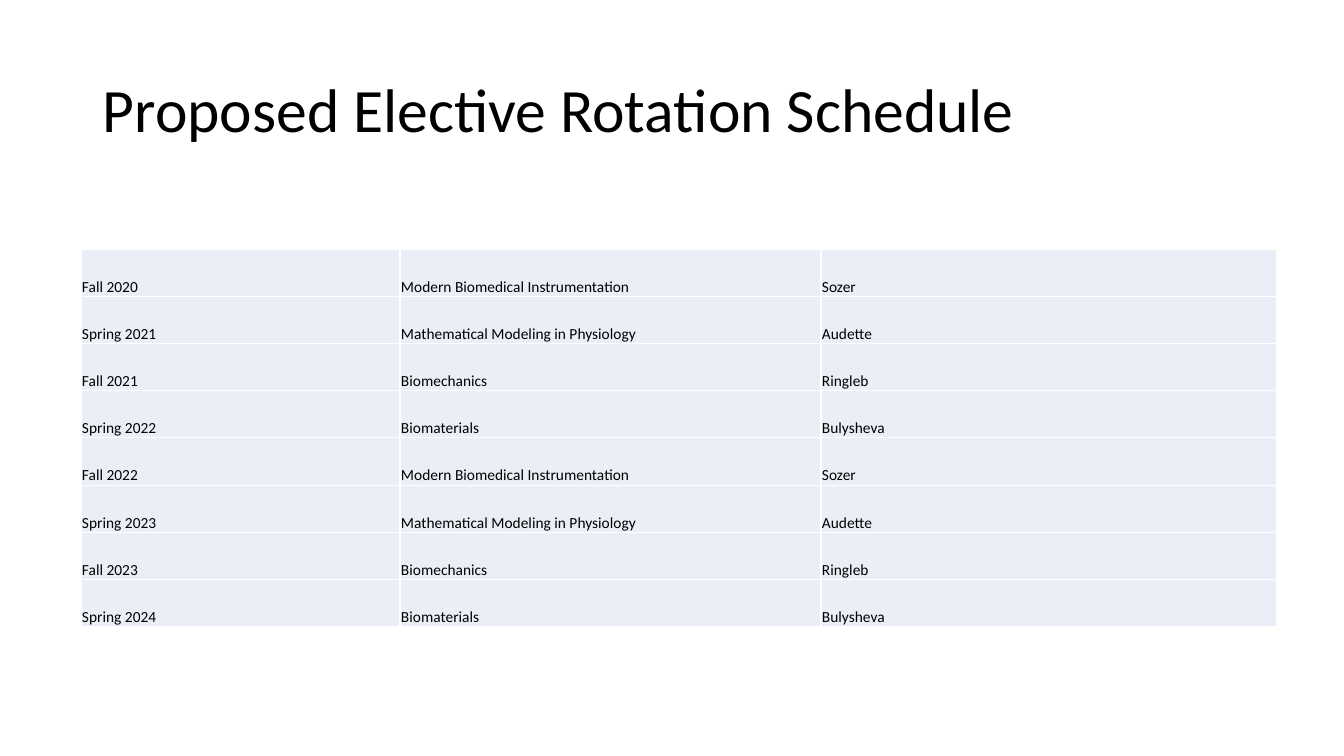
from lxml.etree import SubElement
from pptx import Presentation
from pptx.dml.color import RGBColor
from pptx.enum.text import MSO_ANCHOR
from pptx.oxml.ns import qn
from pptx.util import Emu, Pt

INK = RGBColor(0x00, 0x00, 0x00)
PALE = RGBColor(0xEA, 0xEF, 0xF7)
WHITE = RGBColor(0xFF, 0xFF, 0xFF)
FONT = "Calibri"
TERMS = [f"{term} {year}" for year, term in (
    (2020, "Fall"), (2021, "Spring"), (2021, "Fall"), (2022, "Spring"),
    (2022, "Fall"), (2023, "Spring"), (2023, "Fall"), (2024, "Spring"))]
COURSES = [
    ("Modern Biomedical Instrumentation", "Sozer"),
    ("Mathematical Modeling in Physiology", "Audette"),
    ("Biomechanics", "Ringleb"),
    ("Biomaterials", "Bulysheva"),
]
WIDTHS = (319, 421, 456)


def px(count):
    return Emu(round(count * 914400 / 100.8))


def style(par, size):
    par.font.name = FONT
    par.font.size = Pt(size)
    par.font.color.rgb = INK


def add_title(slide, left, top, width, height):
    frame = slide.shapes.add_textbox(px(left), px(top), px(width), px(height)).text_frame
    frame.word_wrap = True
    frame.vertical_anchor = MSO_ANCHOR.MIDDLE
    par = frame.paragraphs[0]
    par.text = "Proposed Elective Rotation Schedule"
    par.line_spacing = 0.9
    style(par, 44)


def add_borders(cell):
    props = cell._tc.get_or_add_tcPr()
    for side in ("a:lnL", "a:lnR", "a:lnT", "a:lnB"):
        line = SubElement(props, qn(side), w=str(Pt(1)))
        fill = SubElement(line, qn("a:solidFill"))
        SubElement(fill, qn("a:srgbClr"), val=str(WHITE))


def fill_cell(cell, text):
    add_borders(cell)
    cell.fill.solid()
    cell.fill.fore_color.rgb = PALE
    cell.vertical_anchor = MSO_ANCHOR.BOTTOM
    cell.margin_left = cell.margin_right = cell.margin_top = px(1)
    cell.margin_bottom = 0
    par = cell.text_frame.paragraphs[0]
    par.text = text
    style(par, 11)


def add_schedule(slide, left, top, width, height):
    table = slide.shapes.add_table(
        len(TERMS), len(WIDTHS), px(left), px(top), px(width), px(height)).table
    table.first_row = table.horz_banding = False
    for column, share in zip(table.columns, WIDTHS):
        column.width = px(width * share / sum(WIDTHS))
    for row, term in enumerate(TERMS):
        values = (term, *COURSES[row % len(COURSES)])
        for col, text in enumerate(values):
            fill_cell(table.cell(row, col), text)


def main():
    deck = Presentation()
    deck.slide_width, deck.slide_height = px(1344), px(756)
    slide = deck.slides.add_slide(deck.slide_layouts[6])
    slide.background.fill.solid()
    slide.background.fill.fore_color.rgb = WHITE
    add_title(slide, 93, 40, 1159, 146)
    add_schedule(slide, 81, 249, 1196, 378)
    deck.save("out.pptx")


if __name__ == "__main__":
    main()
